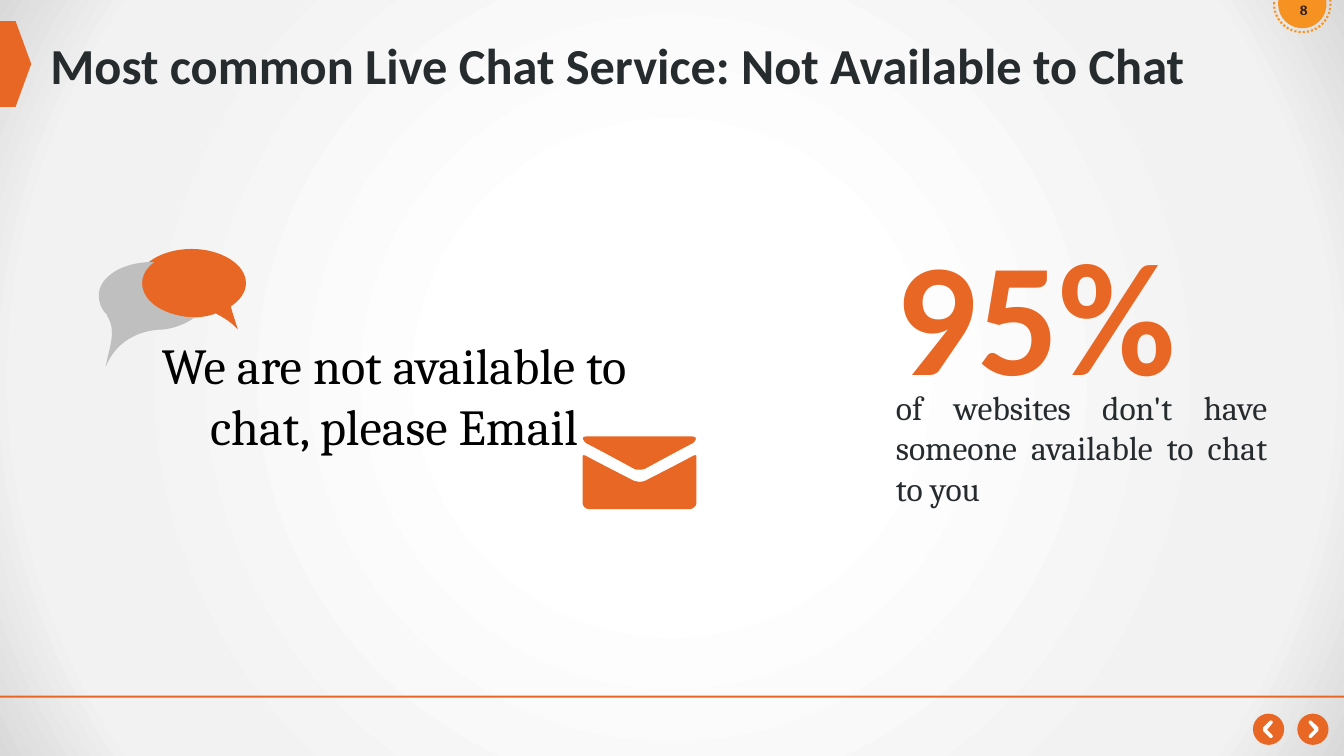
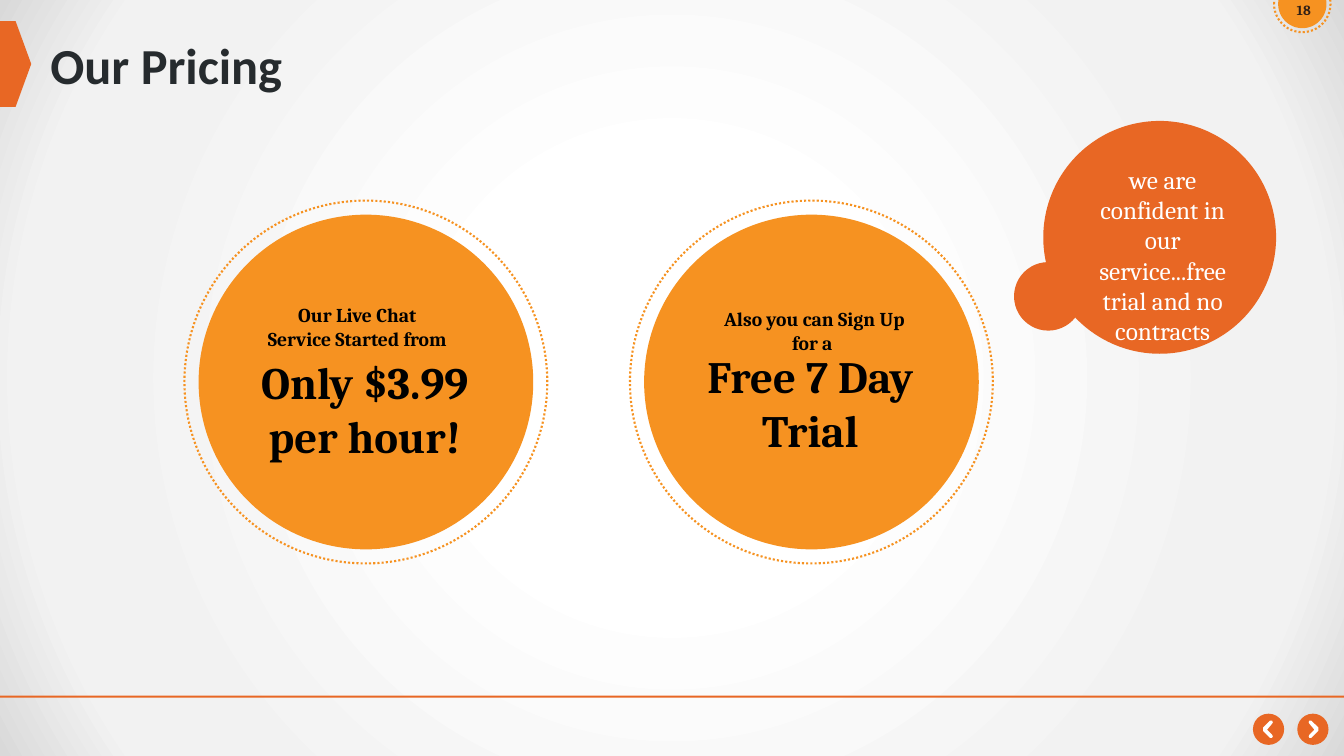
import lxml.etree
import pptx
import pptx.dml.color
import pptx.enum.dml
import pptx.enum.shapes
import pptx.enum.text
import pptx.oxml
import pptx.oxml.ns
import pptx.util

Inches = pptx.util.Inches
RGBColor = pptx.dml.color.RGBColor
qn = pptx.oxml.ns.qn
SHAPE = pptx.enum.shapes.MSO_SHAPE
ALIGN = pptx.enum.text.PP_ALIGN
ANCHOR = pptx.enum.text.MSO_ANCHOR
AUTO_SIZE = pptx.enum.text.MSO_AUTO_SIZE

ORANGE = RGBColor(0xE8, 0x67, 0x24)
AMBER = RGBColor(0xF6, 0x92, 0x21)
GREY = RGBColor(0xBF, 0xBF, 0xBF)
CHARCOAL = RGBColor(0x26, 0x2B, 0x2E)
BROWN = RGBColor(0x31, 0x20, 0x16)
BLACK = RGBColor(0, 0, 0)
WHITE = RGBColor(0xFF, 0xFF, 0xFF)
BACKDROP = [(0, "FFFFFF"), (27, "FFFFFF"), (74, "F2F2F2"), (85, "F2F2F2"), (100, "D9D9D9")]
HEADING_FONT = "Calibri"
BODY_FONT = "Cambria"

CHEVRON = [[
    (0.03, 0),
    ((0.04, 0.01), (0.1, 0.07), (0.1, 0.07)),
    ((0.1, 0.08), (0.1, 0.08), (0.1, 0.09)),
    ((0.1, 0.09), (0.1, 0.09), (0.1, 0.1)),
    ((0.1, 0.1), (0.04, 0.16), (0.03, 0.17)),
    ((0.02, 0.17), (0.01, 0.17), (0.01, 0.17)),
    ((0, 0.16), (0, 0.15), (0.01, 0.14)),
    (0.06, 0.09),
    (0.01, 0.03),
    ((0, 0.02), (0, 0.01), (0.01, 0)),
    ((0.01, 0), (0.02, 0), (0.03, 0)),
]]
FRONT_BUBBLE = [[
    (1.08, 0.34),
    ((1.08, 0.15), (0.83, 0), (0.54, 0)),
    ((0.25, 0), (0, 0.15), (0, 0.34)),
    ((0, 0.53), (0.25, 0.68), (0.54, 0.68)),
    ((0.62, 0.68), (0.7, 0.67), (0.78, 0.64)),
    ((0.86, 0.68), (0.94, 0.73), (1, 0.8)),
    ((0.98, 0.73), (0.95, 0.65), (0.93, 0.57)),
    ((1.02, 0.51), (1.08, 0.43), (1.08, 0.34)),
]]
BACK_BUBBLE = [[
    (0.43, 0.21),
    ((0.43, 0.13), (0.47, 0.06), (0.55, 0)),
    ((0.54, 0), (0.54, 0), (0.53, 0)),
    ((0.23, 0), (0, 0.15), (0, 0.33)),
    ((0, 0.41), (0.03, 0.48), (0.09, 0.53)),
    ((0.08, 0.53), (0.08, 0.53), (0.08, 0.53)),
    ((0.19, 0.69), (0.09, 0.88), (0.07, 1.04)),
    ((0.16, 0.8), (0.39, 0.67), (0.64, 0.67)),
    ((0.63, 0.67), (0.63, 0.67), (0.63, 0.67)),
    ((0.75, 0.66), (0.87, 0.61), (0.95, 0.55)),
    ((0.66, 0.54), (0.43, 0.4), (0.43, 0.21)),
]]
ENVELOPE = [
    [(0.04, 0.07), ((0.07, 0.08), (0.49, 0.31), (0.51, 0.32)),
     ((0.52, 0.33), (0.54, 0.33), (0.56, 0.33)), ((0.58, 0.33), (0.6, 0.33), (0.62, 0.32)),
     ((0.64, 0.31), (1.06, 0.08), (1.09, 0.07)), ((1.12, 0.05), (1.15, 0), (1.09, 0)),
     (0.03, 0), ((-0.02, 0), (0.01, 0.05), (0.04, 0.07))],
    [(1.1, 0.19), ((1.07, 0.21), (0.64, 0.43), (0.62, 0.44)),
     ((0.6, 0.45), (0.58, 0.45), (0.56, 0.45)), ((0.54, 0.45), (0.53, 0.45), (0.51, 0.44)),
     ((0.49, 0.43), (0.06, 0.21), (0.03, 0.19)), ((0, 0.18), (0, 0.19), (0, 0.2)),
     (0, 0.66), ((0, 0.69), (0.03, 0.72), (0.06, 0.72)), (1.07, 0.72),
     ((1.09, 0.72), (1.13, 0.69), (1.13, 0.66)), (1.13, 0.2),
     ((1.13, 0.19), (1.13, 0.18), (1.1, 0.19))],
]


def format_text(holder, text, size=18, font=BODY_FONT, color=BLACK, bold=False,
                align=ALIGN.LEFT, anchor=ANCHOR.TOP, spacing=None, grow=True):
    frame = holder.text_frame
    frame.word_wrap = True
    frame.auto_size = AUTO_SIZE.SHAPE_TO_FIT_TEXT if grow else AUTO_SIZE.NONE
    frame.vertical_anchor = anchor
    paragraph = frame.paragraphs[0]
    paragraph.alignment = align
    paragraph.line_spacing = spacing
    run = paragraph.add_run()
    run.text = text
    run.font.size = pptx.util.Pt(size)
    run.font.name = font
    run.font.bold = bold
    run.font.color.rgb = color


def add_text(slide, text, left, top, width, height, **style):
    box = slide.shapes.add_textbox(Inches(left), Inches(top), Inches(width), Inches(height))
    format_text(box, text, **style)


def paint(shape, color):
    shape.shadow.inherit = False
    shape.fill.solid()
    shape.fill.fore_color.rgb = color
    shape.line.fill.background()


def add_solid(slide, preset, left, top, width, height, color):
    solid = slide.shapes.add_shape(preset, Inches(left), Inches(top), Inches(width), Inches(height))
    paint(solid, color)
    return solid


def add_dotted_disc(slide, left, top, size, gap):
    add_solid(slide, SHAPE.OVAL, left, top, size, size, AMBER)
    ring_size = size + 2 * gap
    ring = add_solid(slide, SHAPE.OVAL, left - gap, top - gap, ring_size, ring_size, AMBER)
    ring.fill.background()
    ring.line.color.rgb = AMBER
    ring.line.width = pptx.util.Pt(1.5)
    ring.line.dash_style = pptx.enum.dml.MSO_LINE.ROUND_DOT


def bend(line, controls, origin):
    curve = lxml.etree.Element(qn("a:cubicBezTo"))
    for x, y in controls:
        lxml.etree.SubElement(curve, qn("a:pt"), x=str(x - origin[0]), y=str(y - origin[1]))
    curve.append(line[0])
    line.getparent().replace(line, curve)


def add_outline(slide, contours, left, top, color, mirror=False):
    direction = -1 if mirror else 1

    def place(point):
        return Inches(left + direction * point[0]), Inches(top + point[1])

    builder = None
    segments = []
    for start, *rest in contours:
        if builder is None:
            builder = slide.shapes.build_freeform(*place(start))
        else:
            builder.move_to(*place(start))
        steps = [[place(p) for p in step] if len(step) == 3 else [place(step)] for step in rest]
        builder.add_line_segments([step[-1] for step in steps], close=True)
        segments += steps
    outline = builder.convert_to_shape()
    paint(outline, color)
    lines = [line for contour_line in [outline.element.findall(".//" + qn("a:lnTo"))]
             for line in contour_line]
    for line, step in zip(lines, segments):
        if len(step) == 3:
            bend(line, step[:2], (outline.left, outline.top))


def paint_backdrop(layout):
    layout.background.fill.gradient()
    gradient = layout.element.find(".//" + qn("a:gradFill"))
    stops = "".join(f'<a:gs pos="{position * 1000}"><a:srgbClr val="{color}"/></a:gs>'
                    for position, color in BACKDROP)
    radial = pptx.oxml.parse_xml(
        f'<a:gradFill {pptx.oxml.ns.nsdecls("a")} rotWithShape="1"><a:gsLst>{stops}</a:gsLst>'
        '<a:path path="circle"><a:fillToRect l="50000" t="50000" r="50000" b="50000"/></a:path>'
        '</a:gradFill>')
    gradient.getparent().replace(gradient, radial)


def add_nav_button(slide, left, top, backward):
    add_solid(slide, SHAPE.OVAL, left, top, 0.31, 0.31, ORANGE)
    add_outline(slide, CHEVRON, left + (0.2 if backward else 0.11), top + 0.07, WHITE, mirror=backward)


def decorate_layout(layout, slide):
    paint_backdrop(layout)
    for holder in list(layout.placeholders):
        if holder.placeholder_format.type != pptx.enum.shapes.PP_PLACEHOLDER.TITLE:
            holder.element.getparent().remove(holder.element)
    add_solid(slide, SHAPE.PENTAGON, 0, 0.21, 0.31, 0.85, ORANGE)
    add_nav_button(slide, 12.43, 7.08, backward=True)
    add_nav_button(slide, 12.87, 7.08, backward=False)
    add_solid(slide, SHAPE.RECTANGLE, 0, 6.9, 13.34, 0.02, ORANGE)
    add_dotted_disc(slide, 12.68, -0.2, 0.48, 0.04)
    tree = layout.element.find(".//" + qn("p:spTree"))
    for part in list(slide.shapes):
        if not part.is_placeholder:
            tree.append(part.element)


def start_slide(deck, heading, number):
    layout = deck.slide_layouts.get_by_name("Title Only")
    slide = deck.slides.add_slide(layout)
    if len(deck.slides) == 1:
        decorate_layout(layout, slide)
    title = slide.shapes.title
    title.left, title.top, title.width, title.height = map(Inches, (0.4, 0.32, 12.54, 0.72))
    format_text(title, heading, size=36, font=HEADING_FONT, color=CHARCOAL, bold=True,
                anchor=ANCHOR.MIDDLE, spacing=0.9, grow=False)
    add_text(slide, number, 12.67, -0.03, 0.53, 0.51, size=10, color=BROWN,
             bold=True, align=ALIGN.CENTER, grow=False)
    return slide


def add_chat_icon(slide, left, top):
    add_outline(slide, FRONT_BUBBLE, left + 0.38, top, ORANGE)
    add_outline(slide, BACK_BUBBLE, left, top + 0.13, GREY)


def add_statistic(slide, left, top, width, figure, caption):
    add_text(slide, figure, left, top, width, 1.16, size=115, font=HEADING_FONT, color=ORANGE,
             bold=True, anchor=ANCHOR.MIDDLE, spacing=0.9, grow=False)
    add_text(slide, caption, left, top + 1.16, width, 1.31, size=24, color=CHARCOAL,
             align=ALIGN.JUSTIFY)


def add_offer(slide, left, top, lead, lead_top, lead_width, headline, headline_top):
    add_dotted_disc(slide, left, top, 3.32, 0.14)
    add_text(slide, headline, left + 0.5, top + headline_top, 2.3, 1.18, size=32, bold=True,
             align=ALIGN.CENTER)
    add_text(slide, lead, left + 0.58, top + lead_top, lead_width, 0.57, size=14, bold=True,
             align=ALIGN.CENTER)


def add_promise(slide, left, top, promise):
    add_solid(slide, SHAPE.OVAL, left + 0.29, top, 2.31, 2.31, ORANGE)
    add_solid(slide, SHAPE.OVAL, left, top + 1.4, 0.68, 0.68, ORANGE)
    add_text(slide, promise, left + 0.56, top + 0.38, 1.83, 1.62, size=18, color=WHITE,
             align=ALIGN.CENTER)


def build_availability(deck):
    slide = start_slide(deck, "Most common Live Chat Service: Not Available to Chat", "8")
    add_text(slide, "We are not available to chat, please Email", 1.42, 3.27, 4.98, 1.31,
             size=36, align=ALIGN.CENTER)
    add_statistic(slide, 8.79, 2.63, 3.88, "95%",
                  "of websites don't have someone available to chat to you")
    add_chat_icon(slide, 0.98, 2.47)
    add_outline(slide, ENVELOPE, 5.78, 4.33, ORANGE)


def build_pricing(deck):
    slide = start_slide(deck, "Our Pricing", "18")
    add_offer(slide, 1.97, 2.13, "Our Live Chat Service Started from", 0.83, 1.99,
              "Only $3.99 per hour!", 1.34)
    add_promise(slide, 10.06, 1.2, "we are confident in our service...free trial and no contracts")
    add_offer(slide, 6.39, 2.13, "Also you can Sign Up for a ", 0.87, 2.22,
              "Free 7 Day Trial", 1.28)


def main():
    deck = pptx.Presentation()
    deck.slide_width = Inches(40 / 3)
    deck.slide_height = Inches(7.5)
    build_availability(deck)
    build_pricing(deck)
    deck.save("out.pptx")


if __name__ == "__main__":
    main()
